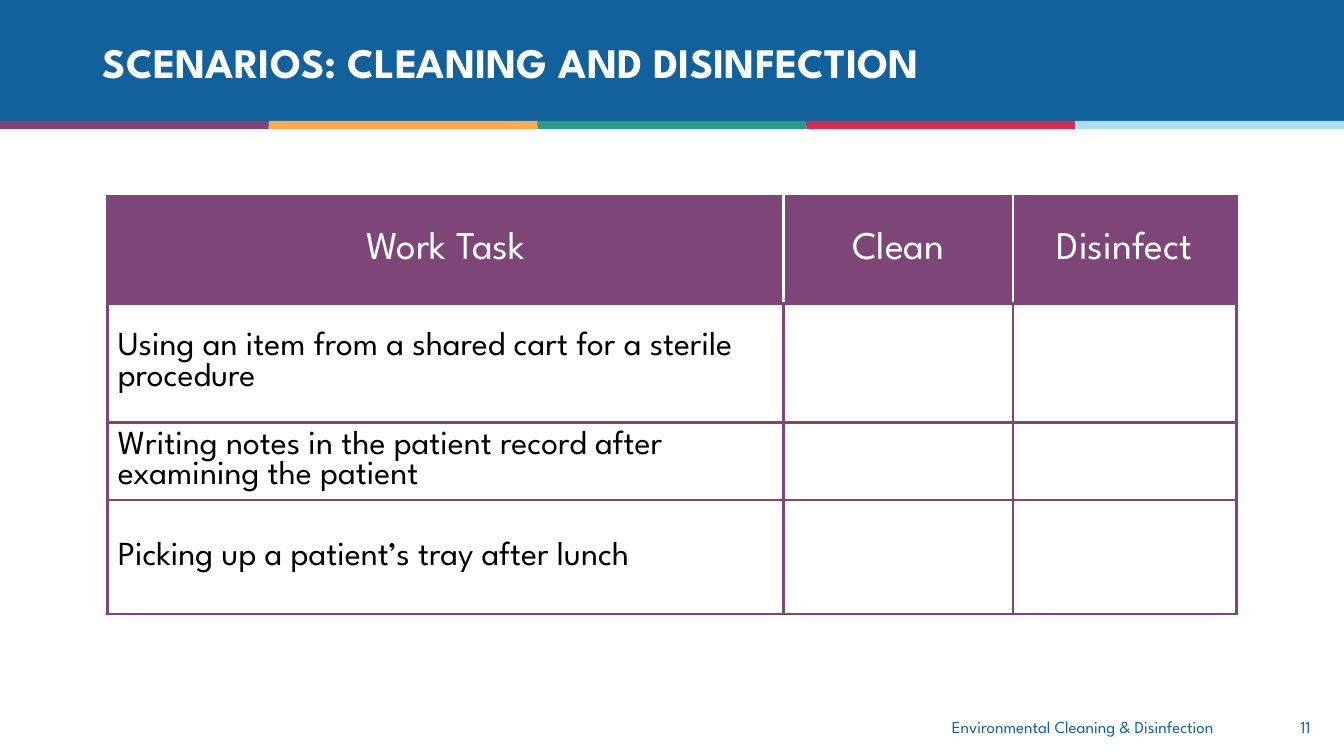
from dataclasses import dataclass

from lxml import etree
from pptx import Presentation
from pptx.dml.color import RGBColor
from pptx.enum.shapes import MSO_SHAPE
from pptx.enum.text import MSO_ANCHOR, PP_ALIGN
from pptx.oxml.ns import qn
from pptx.util import Pt

RECTANGLE = MSO_SHAPE.RECTANGLE
MIDDLE = MSO_ANCHOR.MIDDLE
LEFT, CENTER, RIGHT = PP_ALIGN.LEFT, PP_ALIGN.CENTER, PP_ALIGN.RIGHT


@dataclass(frozen=True)
class Theme:
    font: str = "League Spartan"
    blue: str = "13619C"
    purple: str = "7D4578"
    white: str = "FFFFFF"
    black: str = "000000"
    stripes: tuple = ("7D4578", "FAAA51", "2C998A", "CC314E", "AEDDF4")
    title_size: int = 30
    header_size: int = 28
    task_size: int = 24
    footer_size: int = 12
    border: float = 2.25


THEME = Theme()


def write(frame, text, size, color, align=LEFT, bold=False):
    frame.text = text
    frame.word_wrap = True
    frame.vertical_anchor = MIDDLE
    line = frame.paragraphs[0]
    line.alignment = align
    line.font.name = THEME.font
    line.font.size = Pt(size)
    line.font.bold = bold
    line.font.color.rgb = RGBColor.from_string(color)


def add_border(cell, side, color):
    """Draw one side of a cell: L, R, T or B."""
    edge = etree.SubElement(cell._tc.get_or_add_tcPr(), qn(f"a:ln{side}"),
                            w=str(Pt(THEME.border)))
    fill = etree.SubElement(edge, qn("a:solidFill"))
    etree.SubElement(fill, qn("a:srgbClr"), val=color)


prs = Presentation()
prs.slide_width, prs.slide_height = Pt(960), Pt(540)
slide = prs.slides.add_slide(prs.slide_layouts[5])

# Title band with its colour stripes
stripe_width = 960 / len(THEME.stripes)
bars = [(0, 0, 960, 90, THEME.blue)]
bars += [(i * stripe_width, 86.4, stripe_width, 5.8, color)
         for i, color in enumerate(THEME.stripes)]
for left, top, width, height, color in bars:
    bar = slide.shapes.add_shape(RECTANGLE, Pt(left), Pt(top), Pt(width), Pt(height))
    bar.shadow.inherit = False
    bar.fill.solid()
    bar.fill.fore_color.rgb = RGBColor.from_string(color)
    bar.line.fill.background()

title = slide.shapes.title
title.left, title.top, title.width, title.height = Pt(66.2), Pt(18.7), Pt(828), Pt(55.4)
write(title.text_frame, "SCENARIOS: CLEANING AND DISINFECTION",
      THEME.title_size, THEME.white, bold=True)
title.text_frame.paragraphs[0].line_spacing = 0.9
title.element.getparent().append(title.element)  # bring in front of the band

# Work task table
rows = [
    ("Work Task", "Clean", "Disinfect"),
    ("Using an item from a shared cart for a sterile procedure", "", ""),
    ("Writing notes in the patient record after examining the patient", "", ""),
    ("Picking up a patient’s tray after lunch", "", ""),
]
column_widths = (482.6, 164, 159.4)
row_heights = (77, 85, 55.2, 81.4)
tasks = slide.shapes.add_table(len(rows), len(column_widths), Pt(77), Pt(140),
                               Pt(sum(column_widths)), Pt(sum(row_heights))).table
for column, width in zip(tasks.columns, column_widths):
    column.width = Pt(width)
for row, height in zip(tasks.rows, row_heights):
    row.height = Pt(height)

last_column = len(column_widths) - 1
for r, texts in enumerate(rows):
    is_header = r == 0
    divider = THEME.white if is_header else THEME.purple
    for c, text in enumerate(texts):
        cell = tasks.cell(r, c)
        add_border(cell, "L", divider if c > 0 else THEME.purple)
        add_border(cell, "R", divider if c < last_column else THEME.purple)
        add_border(cell, "T", THEME.purple)
        add_border(cell, "B", THEME.purple)
        cell.fill.solid()
        cell.fill.fore_color.rgb = RGBColor.from_string(
            THEME.purple if is_header else THEME.white)
        if is_header:
            write(cell.text_frame, text, THEME.header_size, THEME.white, CENTER)
        else:
            write(cell.text_frame, text, THEME.task_size, THEME.black)
        cell.vertical_anchor = MIDDLE

# Footer
for text, left, width in (("Environmental Cleaning & Disinfection", 370.8, 503.3),
                          ("11", 894.2, 49)):
    footer = slide.shapes.add_textbox(Pt(left), Pt(504.7), Pt(width), Pt(28.8))
    write(footer.text_frame, text, THEME.footer_size, THEME.blue, RIGHT)

prs.save("out.pptx")
